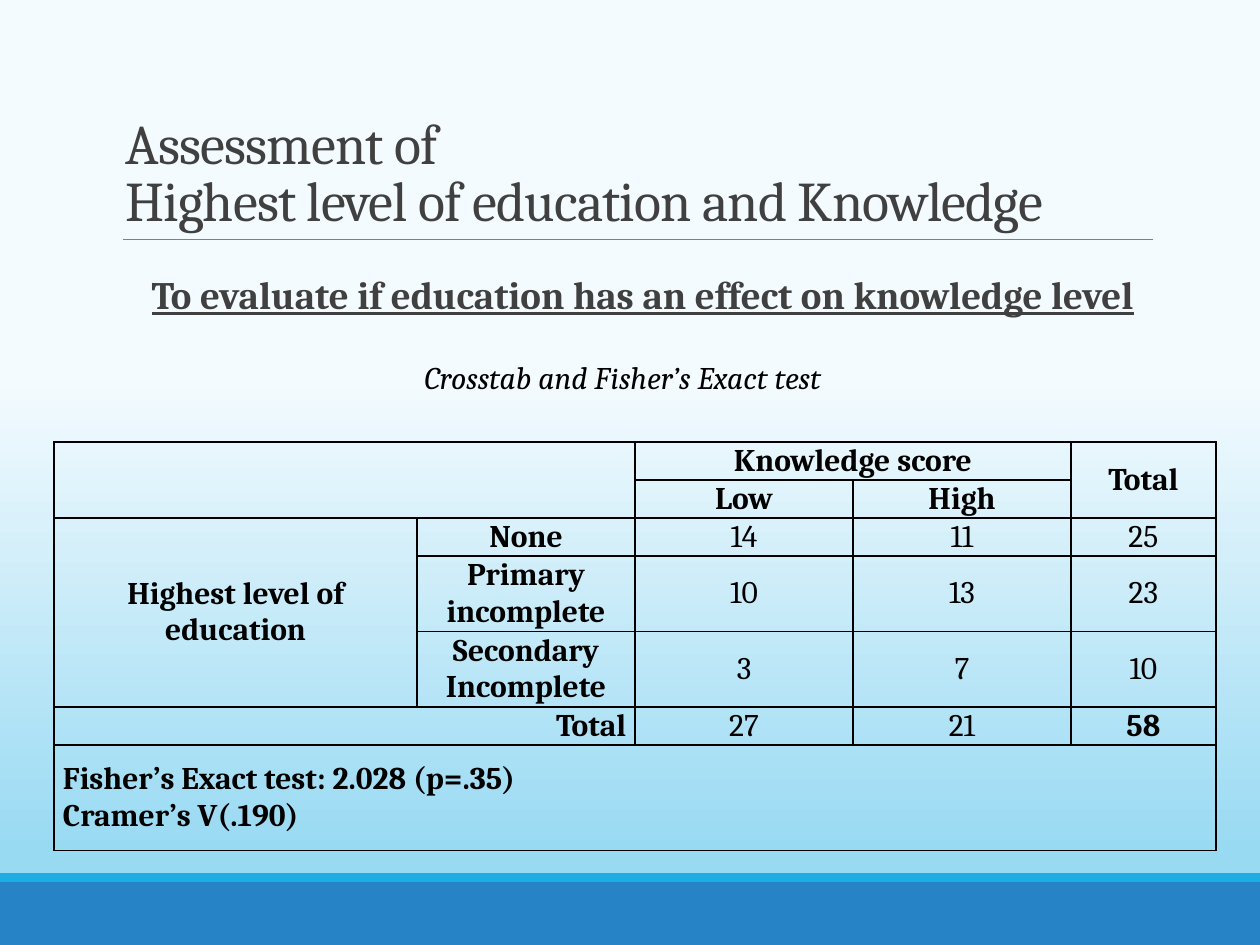
from typing import NamedTuple

from lxml.etree import SubElement
from pptx import Presentation
from pptx.dml.color import RGBColor
from pptx.enum.shapes import MSO_CONNECTOR, MSO_SHAPE
from pptx.enum.text import MSO_ANCHOR, MSO_AUTO_SIZE, PP_ALIGN
from pptx.oxml.ns import qn
from pptx.util import Inches, Pt

BLACK = RGBColor(0x00, 0x00, 0x00)
DARK_GREY = RGBColor(0x40, 0x40, 0x40)
RULE_GREY = RGBColor(0x80, 0x80, 0x80)
BLUE = RGBColor(0x26, 0x83, 0xC6)
CYAN = RGBColor(0x1C, 0xAD, 0xE4)
PALE = RGBColor(0xF4, 0xFB, 0xFE)
SKY = RGBColor(0x99, 0xDA, 0xF3)
FONT = "Cambria"


class Band(NamedTuple):
    top: float
    height: float
    color: RGBColor


class Cell(NamedTuple):
    row: int
    column: int
    text: str
    bold: bool = True
    align: PP_ALIGN = PP_ALIGN.CENTER
    row_span: int = 1
    column_span: int = 1


BANDS = [Band(7, 0.5, BLUE), Band(6.93, 0.07, CYAN)]
COLUMN_WIDTHS = [2.88, 1.73, 1.73, 1.73, 1.15]
ROW_HEIGHTS = [0.29, 0.29, 0.29, 0.58, 0.58, 0.29, 0.84]
COUNTS = [(14, 11, 25), (10, 13, 23), (3, 7, 10), (27, 21, 58)]
CELLS = [
    Cell(0, 0, "", row_span=2, column_span=2),
    Cell(0, 2, "Knowledge score", column_span=2),
    Cell(0, 4, "Total", row_span=2),
    Cell(1, 2, "Low"),
    Cell(1, 3, "High"),
    Cell(2, 0, "Highest level of education", row_span=3),
    Cell(2, 1, "None"),
    Cell(3, 1, "Primary incomplete"),
    Cell(4, 1, "Secondary Incomplete"),
    Cell(5, 0, "Total", align=PP_ALIGN.RIGHT, column_span=2),
    Cell(6, 0, "Fisher’s Exact test: 2.028 (p=.35)\nCramer’s V(.190)",
         align=PP_ALIGN.LEFT, column_span=5),
] + [
    Cell(row, column, str(count), bold=count == 58)
    for row, counts in enumerate(COUNTS, start=2)
    for column, count in enumerate(counts, start=2)
]


def write(frame, text: str, *, size: float = 18, color: RGBColor = BLACK,
          bold: bool = False, italic: bool = False, underline: bool = False,
          align: PP_ALIGN = PP_ALIGN.LEFT, line_spacing: float = 1.0,
          before: float = 0, after: float = 0, tracking: float = 0) -> None:
    """Fill a text frame; a newline starts a paragraph, a vertical tab a line."""
    for index, line in enumerate(text.split("\n")):
        para = frame.add_paragraph() if index else frame.paragraphs[0]
        para.text = line
        para.alignment = align
        para.line_spacing = line_spacing
        para.space_before, para.space_after = Pt(before), Pt(after)
        for span in para.runs:
            font = span.font
            font.name, font.size = FONT, Pt(size)
            font.bold, font.italic, font.underline = bold, italic, underline
            font.color.rgb = color
            if tracking:
                font._element.set("spc", str(round(tracking * 100)))


def add_frame(page, left: float, top: float, width: float, height: float,
              wrap: bool = True):
    box = page.shapes.add_textbox(Inches(left), Inches(top), Inches(width), Inches(height))
    box.text_frame.word_wrap = wrap
    return box.text_frame


def add_band(page, band: Band) -> None:
    shape = page.shapes.add_shape(MSO_SHAPE.RECTANGLE, Inches(0), Inches(band.top),
                                  Inches(10), Inches(band.height))
    shape.shadow.inherit = False
    shape.fill.solid()
    shape.fill.fore_color.rgb = band.color
    shape.line.fill.background()


def add_rule(page) -> None:
    rule = page.shapes.add_connector(MSO_CONNECTOR.STRAIGHT, Inches(0.98), Inches(1.9),
                                     Inches(9.15), Inches(1.9))
    rule.line.color.rgb = RULE_GREY
    rule.line.width = Pt(0.5)
    SubElement(rule._element.spPr, qn("a:effectLst"))


def add_hanging_bullet(para) -> None:
    properties = para._p.get_or_add_pPr()
    properties.set("marL", str(Inches(0.1)))
    properties.set("indent", str(Inches(-0.1)))
    SubElement(properties, qn("a:buChar")).set("char", " ")


def style_cell(cell) -> None:
    """Clear the fill, set the margins and draw a black border all round."""
    cell.margin_left = cell.margin_right = Inches(0.07)
    cell.margin_top = cell.margin_bottom = 0
    cell.vertical_anchor = MSO_ANCHOR.MIDDLE
    properties = cell._tc.get_or_add_tcPr()
    for side in ("lnL", "lnR", "lnT", "lnB"):
        border = SubElement(properties, qn(f"a:{side}"))
        border.set("w", str(Pt(1)))
        fill = SubElement(border, qn("a:solidFill"))
        SubElement(fill, qn("a:srgbClr")).set("val", str(BLACK))
    cell.fill.background()


def add_crosstab(page) -> None:
    table = page.shapes.add_table(
        len(ROW_HEIGHTS), len(COLUMN_WIDTHS), Inches(0.43), Inches(3.51),
        Inches(sum(COLUMN_WIDTHS)), Inches(sum(ROW_HEIGHTS))).table
    table.first_row = table.horz_banding = False
    for column, width in zip(table.columns, COLUMN_WIDTHS):
        column.width = Inches(width)
    for row, height in zip(table.rows, ROW_HEIGHTS):
        row.height = Inches(height)
    for cell in table.iter_cells():
        style_cell(cell)
    for item in CELLS:
        cell = table.cell(item.row, item.column)
        if item.row_span * item.column_span > 1:
            cell.merge(table.cell(item.row + item.row_span - 1,
                                  item.column + item.column_span - 1))
        write(cell.text_frame, item.text, bold=item.bold, align=item.align)


def main() -> None:
    deck = Presentation()
    deck.slide_width, deck.slide_height = Inches(10), Inches(7.5)
    page = deck.slides.add_slide(deck.slide_layouts[6])

    background = page.background.fill
    background.gradient()
    background.gradient_angle = 270
    for stop, position, color in zip(background.gradient_stops, (0.4, 0.9), (PALE, SKY)):
        stop.position = position
        stop.color.rgb = color

    for band in BANDS:
        add_band(page, band)
    add_rule(page)

    title = add_frame(page, 0.9, 0.31, 8.25, 1.59)
    title.vertical_anchor = MSO_ANCHOR.BOTTOM
    write(title, "Assessment of \vHighest level of education and Knowledge",
          size=32, color=DARK_GREY, line_spacing=0.85, tracking=-0.5)

    question = add_frame(page, 0.9, 2.14, 8.25, 0.55)
    question.margin_left = question.margin_right = 0
    write(question, "To evaluate if education has an effect on knowledge level",
          size=22.2, color=DARK_GREY, bold=True, underline=True,
          align=PP_ALIGN.CENTER, line_spacing=0.9, before=12, after=2)
    add_hanging_bullet(question.paragraphs[0])

    add_crosstab(page)

    method = add_frame(page, 3.27, 2.49, 3.5, 0.61, wrap=False)
    method.auto_size = MSO_AUTO_SIZE.SHAPE_TO_FIT_TEXT
    write(method, "Crosstab and Fisher’s Exact test", italic=True,
          align=PP_ALIGN.JUSTIFY, line_spacing=2.0, after=10)

    deck.save("out.pptx")


if __name__ == "__main__":
    main()
